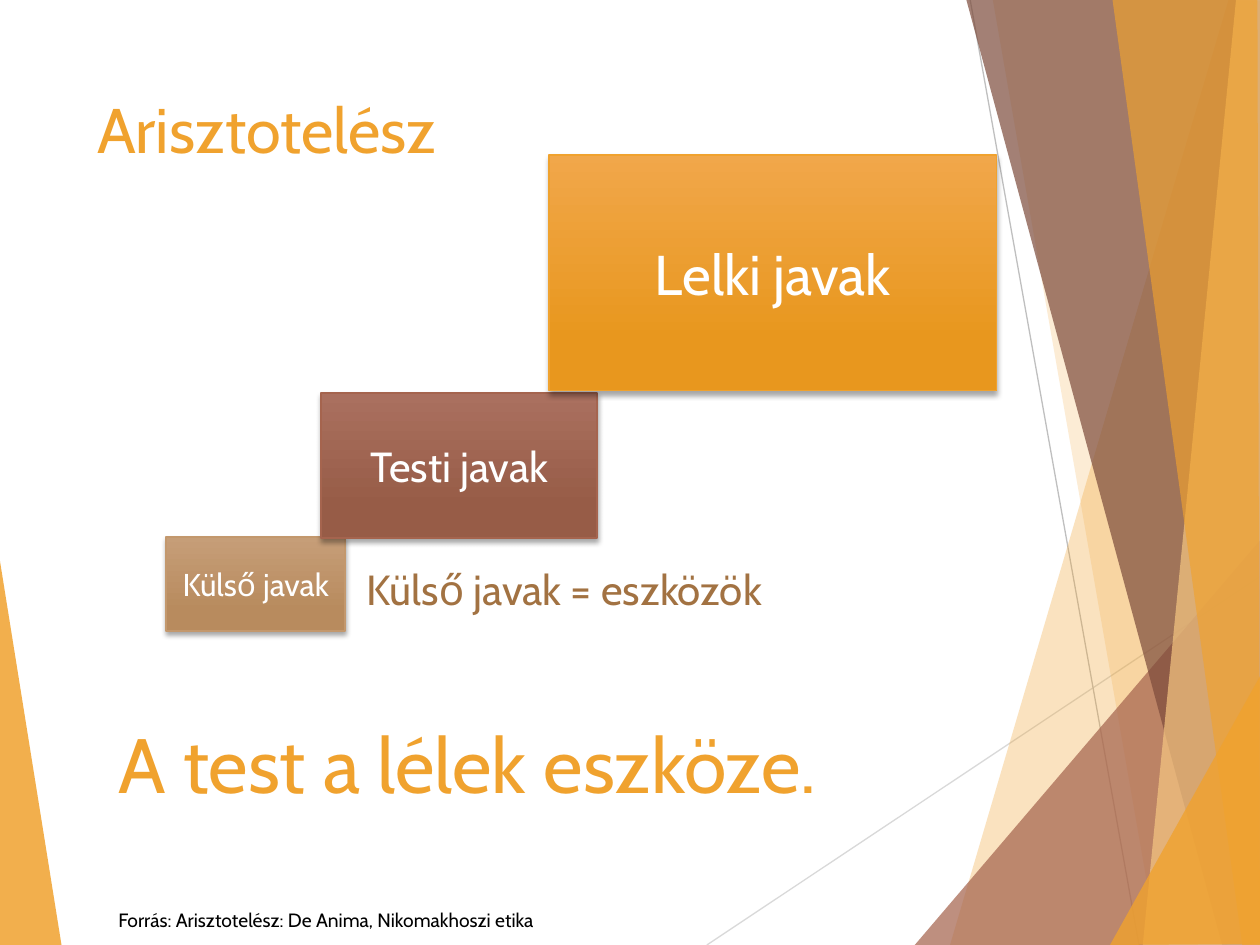
from typing import NamedTuple

from lxml import etree
from pptx import Presentation
from pptx.dml.color import RGBColor
from pptx.enum.shapes import MSO_CONNECTOR, MSO_SHAPE
from pptx.enum.text import MSO_ANCHOR, MSO_AUTO_SIZE, PP_ALIGN
from pptx.oxml.ns import qn
from pptx.util import Inches, Pt

RECTANGLE = MSO_SHAPE.RECTANGLE
STRAIGHT = MSO_CONNECTOR.STRAIGHT
TOP, MIDDLE = MSO_ANCHOR.TOP, MSO_ANCHOR.MIDDLE
LEFT, CENTER = PP_ALIGN.LEFT, PP_ALIGN.CENTER
FIT_SHAPE, NO_FIT = MSO_AUTO_SIZE.SHAPE_TO_FIT_TEXT, MSO_AUTO_SIZE.NONE

SLIDE_WIDTH, SLIDE_HEIGHT = Inches(10), Inches(7.5)
COLUMNS, ROWS = 100, 75
FONT = "Cabin"
COLORS = {
    "orange": "F0A22E", "orange_top": "F1A74A", "orange_bottom": "E8971E",
    "pale_orange": "F6C782",
    "red": "A5644E", "red_top": "AA705F", "red_bottom": "975C47",
    "dark_red": "7C4B3B",
    "tan": "C3986D", "tan_top": "C69E78", "tan_bottom": "B88B5E",
    "brown": "A27242", "black": "000000", "white": "FFFFFF",
    "light_gray": "D9D9D9", "gray": "BFBFBF",
}


class Box(NamedTuple):
    """Left, top, width and height in grid columns and rows."""
    left: float
    top: float
    width: float
    height: float


class Ray(NamedTuple):
    start: tuple[float, float]
    end: tuple[float, float]
    color: str


class Facet(NamedTuple):
    points: list[tuple[float, float]]
    color: str
    opacity: int


class Step(NamedTuple):
    text: str
    box: Box
    size: int
    color: str


class Label(NamedTuple):
    text: str
    box: Box
    size: int
    color: str
    wrap: bool = True


LEFT_FACET = Facet([(-0.1, 43.9), (4.9, 75.1), (-0.1, 75)], "orange", 85)
RAYS = [
    Ray((56.1, 75), (100.1, 45.7), "light_gray"),
    Ray((77, 0), (90.4, 75), "gray"),
]
RIGHT_FACETS = [
    Facet([(97.5, 0), (75.4, 75), (100.2, 75.1), (100.1, 0.1)], "orange", 30),
    Facet([(78.8, 0), (91.9, 75), (100.1, 75), (100.1, 0)], "orange", 20),
    Facet([(72.6, 75), (100, 42.9), (100.1, 75)], "red", 72),
    Facet([(76.7, 0), (97, 75), (100.1, 75), (100.1, 0)], "dark_red", 70),
    Facet([(98.1, 0), (90.7, 75), (100.1, 75), (100, 0)], "pale_orange", 70),
    Facet([(88.3, 0), (98.6, 75), (100, 75), (99.8, 0)], "orange", 65),
    Facet([(88.1, 75), (100.1, 53.5), (100.1, 74.9)], "orange", 80),
]
TITLE = Label("Arisztotelész", Box(6.7, 6.7, 69.4, 14.4), 36, "orange")
STEPS = [
    Step("Külső javak", Box(13.2, 42.6, 14.2, 7.5), 18, "tan"),
    Step("Testi javak", Box(25.5, 31.2, 21.9, 11.5), 24, "red"),
    Step("Lelki javak", Box(43.6, 12.3, 35.5, 18.7), 32, "orange"),
]
LABELS = [
    Label("Külső javak = eszközök", Box(28.1, 44.2, 36.4, 5), 24, "brown"),
    Label("A test a lélek eszköze.", Box(8.4, 56.4, 64.1, 8.4), 44, "orange"),
    Label("Forrás: Arisztotelész: De Anima, Nikomakhoszi etika",
          Box(8.4, 71.6, 38.1, 2.9), 11, "black", wrap=False),
]


def rgb(name: str) -> RGBColor:
    return RGBColor.from_string(COLORS[name])


def x(column: float) -> int:
    return round(SLIDE_WIDTH * column / COLUMNS)


def y(row: float) -> int:
    return round(SLIDE_HEIGHT * row / ROWS)


def place(box: Box) -> tuple[int, int, int, int]:
    return x(box.left), y(box.top), x(box.width), y(box.height)


def write(text_frame, text: str, size: int, color: str, alignment=LEFT) -> None:
    text_frame.text = text
    paragraph = text_frame.paragraphs[0]
    paragraph.alignment = alignment
    font = paragraph.runs[0].font
    font.name, font.size = FONT, Pt(size)
    font.color.rgb = rgb(color)


def set_opacity(color_element, percent: int) -> None:
    etree.SubElement(color_element, qn("a:alpha"), val=str(percent * 1000))


def draw_ray(slide, ray: Ray) -> None:
    (x1, y1), (x2, y2) = ray.start, ray.end
    connector = slide.shapes.add_connector(STRAIGHT, x(x1), y(y1), x(x2), y(y2))
    connector.line.color.rgb = rgb(ray.color)
    connector.line.width = Pt(0.75)
    etree.SubElement(connector._element.spPr, qn("a:effectLst"))


def draw_facet(slide, facet: Facet) -> None:
    start, *others = [(x(column), y(row)) for column, row in facet.points]
    builder = slide.shapes.build_freeform(*start)
    builder.add_line_segments(others, close=True)
    shape = builder.convert_to_shape()
    shape.shadow.inherit = False
    shape.fill.solid()
    shape.fill.fore_color.rgb = rgb(facet.color)
    set_opacity(shape._element.spPr.find(".//" + qn("a:srgbClr")), facet.opacity)
    shape.line.fill.background()


def add_drop_shadow(shape) -> None:
    shape.shadow.inherit = False
    effects = shape._element.spPr.find(qn("a:effectLst"))
    shadow = etree.SubElement(effects, qn("a:outerShdw"), blurRad=str(Pt(3)),
                              dist=str(Pt(2)), dir="5400000", rotWithShape="0")
    color = etree.SubElement(shadow, qn("a:srgbClr"), val=COLORS["black"])
    set_opacity(color, 35)


def draw_step(slide, step: Step) -> None:
    shape = slide.shapes.add_shape(RECTANGLE, *place(step.box))
    shape.fill.gradient()
    shape.fill.gradient_angle = 270
    top, bottom = shape.fill.gradient_stops
    top.position, bottom.position = 0, 0.78
    top.color.rgb = rgb(step.color + "_top")
    bottom.color.rgb = rgb(step.color + "_bottom")
    shape.line.color.rgb = rgb(step.color)
    shape.line.width = Pt(1)
    add_drop_shadow(shape)
    shape.text_frame.vertical_anchor = MIDDLE
    write(shape.text_frame, step.text, step.size, "white", CENTER)


def draw_label(slide, label: Label) -> None:
    text_frame = slide.shapes.add_textbox(*place(label.box)).text_frame
    text_frame.word_wrap = label.wrap
    text_frame.auto_size = FIT_SHAPE
    write(text_frame, label.text, label.size, label.color)


def set_title(slide, label: Label) -> None:
    """Fill the title placeholder and bring it in front of the facets."""
    title = slide.shapes.title
    title.left, title.top, title.width, title.height = place(label.box)
    title.text_frame.vertical_anchor = TOP
    title.text_frame.auto_size = NO_FIT
    write(title.text_frame, label.text, label.size, label.color)
    slide.shapes._spTree.append(title._element)


def main() -> None:
    presentation = Presentation()
    presentation.slide_width, presentation.slide_height = SLIDE_WIDTH, SLIDE_HEIGHT
    slide = presentation.slides.add_slide(presentation.slide_layouts[5])
    draw_facet(slide, LEFT_FACET)
    for ray in RAYS:
        draw_ray(slide, ray)
    for facet in RIGHT_FACETS:
        draw_facet(slide, facet)
    set_title(slide, TITLE)
    for step in STEPS:
        draw_step(slide, step)
    for label in LABELS:
        draw_label(slide, label)
    presentation.save("out.pptx")


if __name__ == "__main__":
    main()
